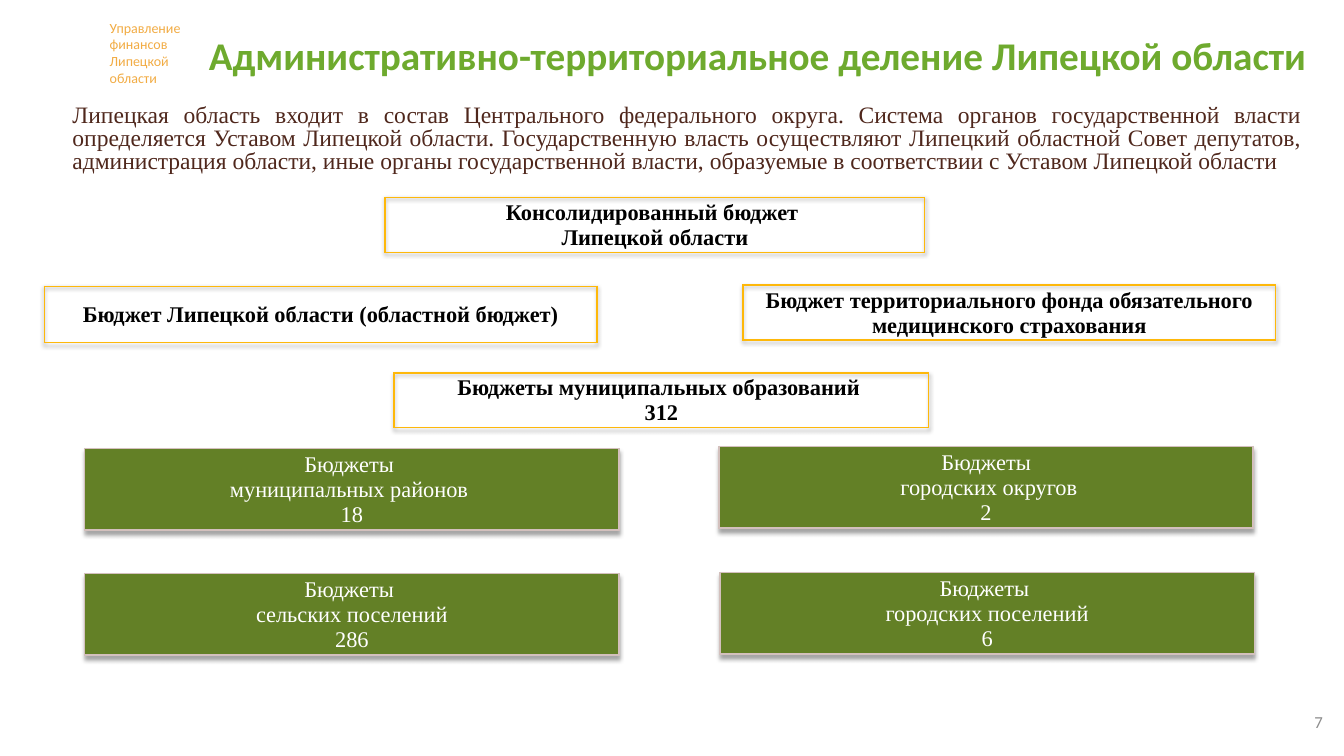
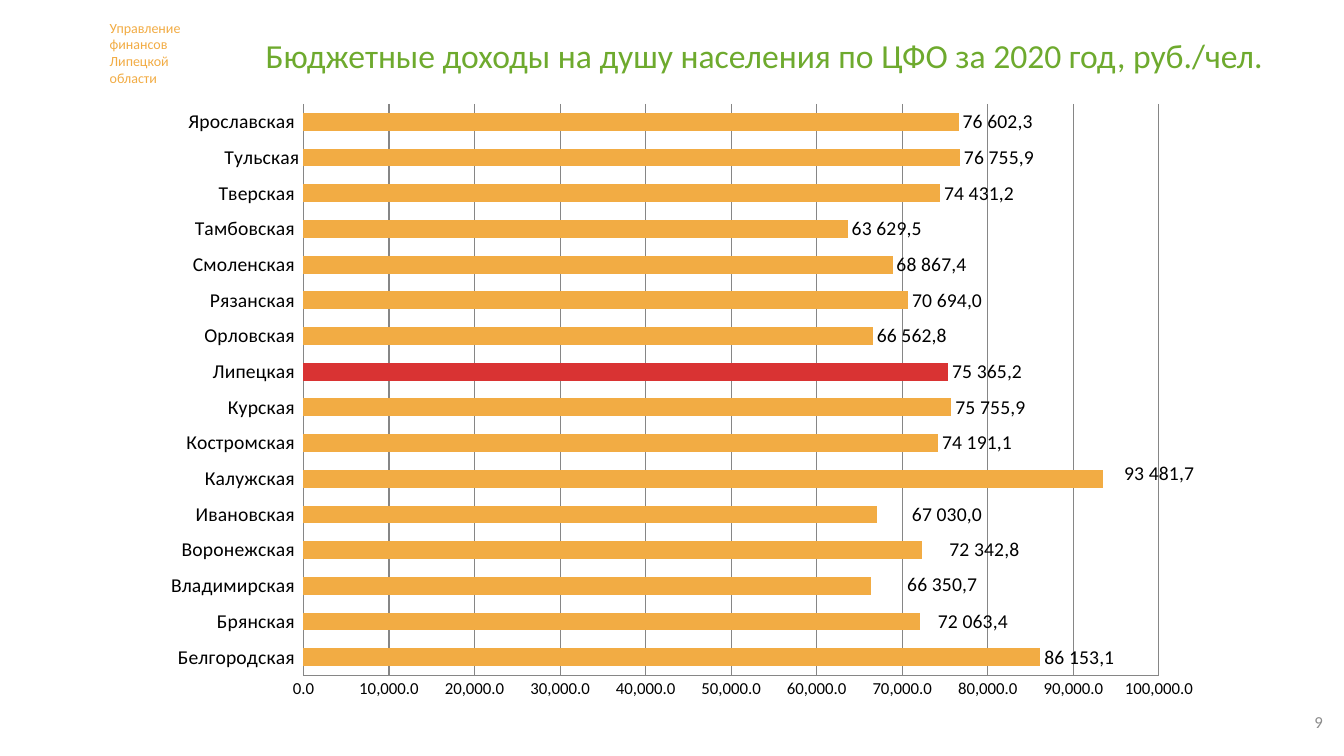
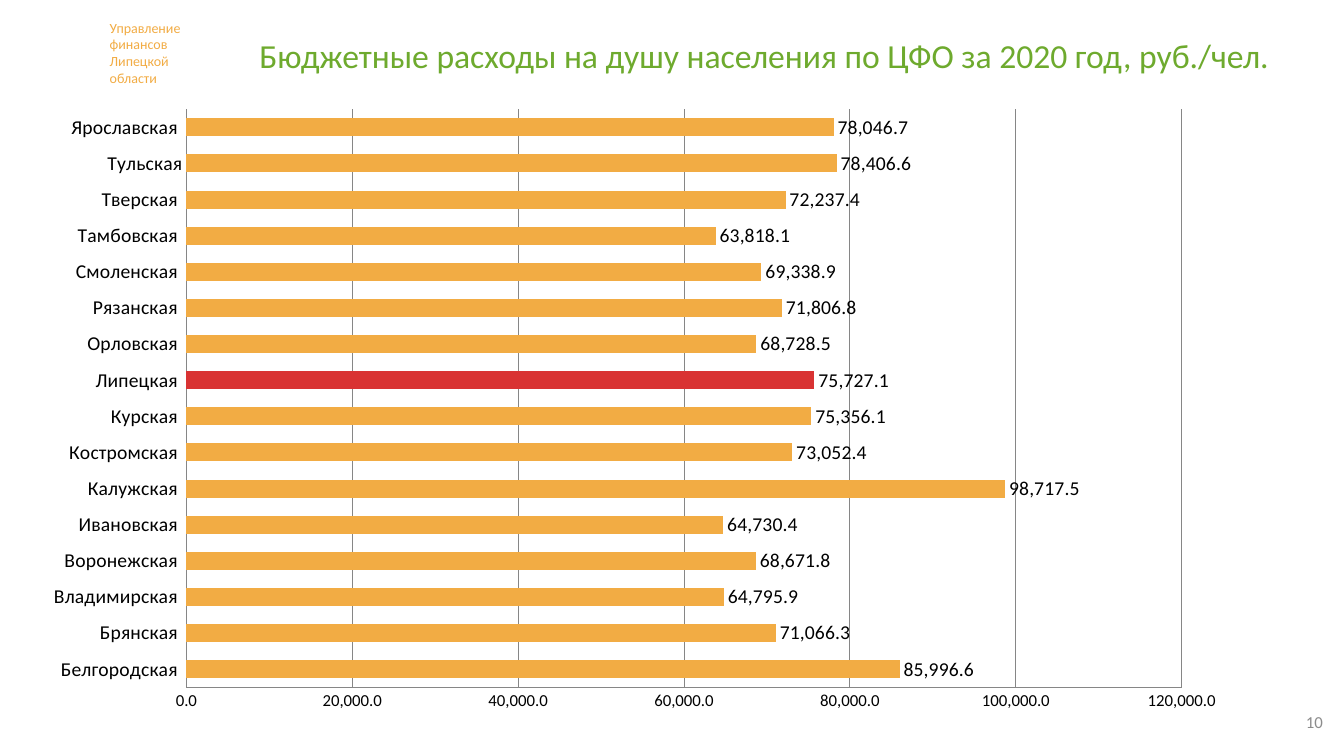
import dataclasses
import typing

import lxml.etree
import pptx
import pptx.chart.data
import pptx.dml.color
import pptx.enum.chart
import pptx.enum.text
import pptx.oxml
import pptx.oxml.ns
import pptx.util

PX = 9144  # EMU in one px, 100 px to the inch
ALIGN = pptx.enum.text.PP_ALIGN
MIDDLE = pptx.enum.text.MSO_ANCHOR.MIDDLE
qn = pptx.oxml.ns.qn


def px(length: int) -> int:
    return length * PX


# Theme: colours and type sizes
@dataclasses.dataclass(frozen=True)
class Theme:
    sans: str = "Calibri"
    serif: str = "Times New Roman"
    green: str = "6EAA2E"
    orange: str = "F2AC44"
    red: str = "D93333"
    brown: str = "4F271C"
    black: str = "000000"
    white: str = "FFFFFF"
    gray: str = "8C8C8C"
    grid: str = "868686"
    gold: str = "FEB80A"
    olive: str = "638026"
    beige: str = "D3C0BD"
    headline: float = 28
    title: float = 24
    chart: float = 18
    intro: float = 16.8
    box: float = 16
    label: float = 14
    small: float = 12
    office: float = 10


THEME = Theme()


class Area(typing.NamedTuple):
    left: int
    top: int
    width: int
    height: int

    def emu(self) -> list[int]:
        return [px(length) for length in self]


@dataclasses.dataclass(frozen=True)
class BoxStyle:
    border: str
    text: str
    bold: bool
    shadow_distance: int
    fill: str | None = None


@dataclasses.dataclass(frozen=True)
class BudgetBox:
    area: Area
    text: str
    style: BoxStyle
    row_height: int = 40  # the row grows to fit its text


@dataclasses.dataclass(frozen=True)
class RegionChart:
    title: str
    number: int
    area: Area
    plot: tuple[float, float, float, float]
    values: list[float]
    maximum: int
    unit: int
    russian_labels: bool = False
    label_shifts: dict[int, tuple[int, int]] = dataclasses.field(default_factory=dict)


OUTLINED = BoxStyle(THEME.gold, THEME.black, True, 2)
FILLED = BoxStyle(THEME.beige, THEME.white, False, 4, THEME.olive)

# Content
OFFICE = "Управление финансов Липецкой области"
INTRO = (
    "Липецкая область входит в состав Центрального федерального округа. "
    "Система органов государственной власти определяется Уставом Липецкой области. "
    "Государственную власть осуществляют Липецкий областной Совет депутатов, "
    "администрация области, иные органы государственной власти, образуемые "
    "в соответствии с Уставом Липецкой области"
)
BUDGETS = [
    BudgetBox(Area(382, 196, 535, 54), "Консолидированный бюджет \nЛипецкой области", OUTLINED),
    BudgetBox(Area(44, 284, 548, 56), "Бюджет Липецкой области (областной бюджет)", OUTLINED, 56),
    BudgetBox(Area(737, 283, 528, 54),
              "Бюджет территориального фонда обязательного медицинского страхования",
              OUTLINED, 50),
    BudgetBox(Area(391, 370, 530, 54), "Бюджеты муниципальных образований \n312", OUTLINED),
    BudgetBox(Area(84, 445, 530, 81), "Бюджеты \nмуниципальных районов \n18", FILLED),
    BudgetBox(Area(713, 443, 530, 81), "Бюджеты\n городских округов\n2", FILLED),
    BudgetBox(Area(84, 569, 530, 81), "Бюджеты \nсельских поселений\n286", FILLED),
    BudgetBox(Area(714, 568, 530, 81), "Бюджеты \nгородских поселений\n6", FILLED),
]
REGIONS = [
    "Белгородская ", "Брянская ", "Владимирская ", "Воронежская ", "Ивановская ", "Калужская ",
    "Костромская ", "Курская ", "Липецкая ", "Орловская ", "Рязанская ", "Смоленская ",
    "Тамбовская ", "Тверская ", "Тульская", "Ярославская ",
]
HIGHLIGHT = REGIONS.index("Липецкая ")
CHARTS = [
    RegionChart(
        "Бюджетные доходы на душу населения по ЦФО за 2020 год, руб./чел.", 9,
        Area(34, 92, 1219, 622), (0.219, 0.018, 0.696, 0.911),
        [86153.1, 72063.4, 66350.7, 72342.8, 67030.0, 93481.7, 74191.1, 75755.9,
         75365.2, 66562.8, 70694.0, 68867.4, 63629.5, 74431.2, 76755.9, 76602.3],
        100000, 10000, True,
        {1: (14, 0), 2: (32, -1), 3: (23, 0), 4: (31, 0), 5: (17, -5)},
    ),
    RegionChart(
        "Бюджетные расходы на душу населения по ЦФО за 2020 год, руб./чел.", 10,
        Area(30, 96, 1201, 622), (0.129, 0.02, 0.822, 0.922),
        [85996.6, 71066.3, 64795.9, 68671.8, 64730.4, 98717.5, 73052.4, 75356.1,
         75727.1, 68728.5, 71806.8, 69338.9, 63818.1, 72237.4, 78406.6, 78046.7],
        120000, 20000,
    ),
]


# Formatting helpers
def rgb(color: str) -> pptx.dml.color.RGBColor:
    return pptx.dml.color.RGBColor.from_string(color)


def set_values(target: typing.Any, **values: typing.Any) -> None:
    for name, value in values.items():
        setattr(target, name, value)


def set_font(font: typing.Any, size: float, color: str, name: str = THEME.sans,
             bold: bool = False) -> None:
    set_values(font, size=pptx.util.Pt(size), name=name, bold=bold)
    font.color.rgb = rgb(color)


def write(frame: typing.Any, text: str, alignment: typing.Any, size: float, color: str,
          name: str = THEME.sans, bold: bool = False, spacing: float | None = None) -> None:
    frame.text = text
    for paragraph in frame.paragraphs:
        set_values(paragraph, alignment=alignment, line_spacing=spacing)
        for run in paragraph.runs:
            set_font(run.font, size, color, name, bold)


def add_text(slide: typing.Any, area: Area, anchor: typing.Any, text: str,
             *style: typing.Any, **options: typing.Any) -> None:
    shape = slide.shapes.add_textbox(*area.emu())
    set_values(shape.text_frame, word_wrap=True, vertical_anchor=anchor)
    write(shape.text_frame, text, *style, **options)


# Shared parts of every slide: office name, title, number
def add_slide(presentation: typing.Any, title: str, area: Area, size: float,
              bold: bool, number: int) -> typing.Any:
    slide = presentation.slides.add_slide(presentation.slide_layouts[5])
    left, top, width, height = area.emu()
    shape = slide.shapes.title
    set_values(shape, left=left, top=top, width=width, height=height)
    set_values(shape.text_frame, word_wrap=True, vertical_anchor=MIDDLE,
               auto_size=pptx.enum.text.MSO_AUTO_SIZE.NONE)
    write(shape.text_frame, title, ALIGN.CENTER, size, THEME.green, bold=bold, spacing=0.9)
    add_text(slide, Area(99, 14, 97, 77), pptx.enum.text.MSO_ANCHOR.TOP, OFFICE,
             ALIGN.LEFT, THEME.office, THEME.orange)
    add_text(slide, Area(1011, 696, 311, 40), MIDDLE, str(number),
             ALIGN.RIGHT, THEME.small, THEME.gray)
    return slide


# Budget boxes: one-cell tables with a border and a soft shadow
def add_budget_box(slide: typing.Any, box: BudgetBox) -> None:
    frame = slide.shapes.add_table(1, 1, *box.area.emu())
    table = frame.table
    table.rows[0].height = px(box.row_height)
    frame.height = px(box.area.height)
    properties = table._tbl.tblPr
    properties.find(qn("a:tableStyleId")).text = "{2D5ABB26-0587-4C30-8999-92F81FD0307C}"
    set_values(table, first_row=False, horz_banding=False)
    namespace = pptx.oxml.ns.nsdecls("a")
    properties.insert(0, pptx.oxml.parse_xml(
        f'<a:effectLst {namespace}><a:outerShdw blurRad="{px(4)}" '
        f'dist="{px(box.style.shadow_distance)}" dir="5400000">'
        '<a:srgbClr val="000000"><a:alpha val="35000"/></a:srgbClr>'
        '</a:outerShdw></a:effectLst>'))

    cell = table.cell(0, 0)
    set_values(cell, vertical_anchor=MIDDLE, margin_left=px(1), margin_right=px(1),
               margin_top=px(1), margin_bottom=0)
    write(cell.text_frame, box.text, ALIGN.CENTER, THEME.box, box.style.text,
          THEME.serif, box.style.bold)
    if box.style.fill:
        cell.fill.solid()
        cell.fill.fore_color.rgb = rgb(box.style.fill)
    else:
        cell.fill.background()
    for position, side in enumerate(("lnL", "lnR", "lnT", "lnB")):
        cell._tc.get_or_add_tcPr().insert(position, pptx.oxml.parse_xml(
            f'<a:{side} {namespace} w="{pptx.util.Pt(1.25)}"><a:solidFill>'
            f'<a:srgbClr val="{box.style.border}"/></a:solidFill></a:{side}>'))


# Charts
def set_layout(parent: typing.Any, position: int, **values: typing.Any) -> None:
    """Give a chart part a manual layout at the given child position."""
    for old in parent.findall(qn("c:layout")):
        parent.remove(old)
    layout = lxml.etree.Element(qn("c:layout"))
    manual = lxml.etree.SubElement(layout, qn("c:manualLayout"))
    for name, value in values.items():
        lxml.etree.SubElement(manual, qn(f"c:{name}")).set("val", str(value))
    parent.insert(position, layout)


def format_axes(chart: typing.Any, data: RegionChart) -> None:
    none = pptx.enum.chart.XL_TICK_MARK.NONE
    for axis, size in ((chart.category_axis, THEME.label), (chart.value_axis, THEME.small)):
        set_values(axis, major_tick_mark=none, minor_tick_mark=none)
        set_font(axis.tick_labels.font, size, THEME.black)
        axis.format.line.color.rgb = rgb(THEME.grid)
    chart.category_axis.has_major_gridlines = False
    value_axis = chart.value_axis
    set_values(value_axis, minimum_scale=0, maximum_scale=data.maximum,
               major_unit=data.unit, has_major_gridlines=True)
    value_axis.major_gridlines.format.line.color.rgb = rgb(THEME.grid)
    set_values(value_axis.tick_labels, number_format="#,##0.0", number_format_is_linked=False)


def write_russian_labels(series: typing.Any, data: RegionChart) -> None:
    for index, value in enumerate(data.values):
        label = series.points[index].data_label
        text = f"{value:,.1f}".replace(",", " ").replace(".", ",")
        write(label.text_frame, text, ALIGN.CENTER, THEME.label, THEME.black)
        label.position = pptx.enum.chart.XL_LABEL_POSITION.OUTSIDE_END


def add_region_chart(slide: typing.Any, data: RegionChart) -> None:
    chart_data = pptx.chart.data.CategoryChartData()
    chart_data.categories = REGIONS
    chart_data.add_series("Series 1", data.values)
    chart = slide.shapes.add_chart(pptx.enum.chart.XL_CHART_TYPE.BAR_CLUSTERED,
                                   *data.area.emu(), chart_data).chart
    set_values(chart, has_legend=False, has_title=False)
    set_font(chart.font, THEME.chart, THEME.black)
    format_axes(chart, data)

    plot = chart.plots[0]
    set_values(plot, gap_width=100, vary_by_categories=False)
    series = plot.series[0]
    for part, color in ((series, THEME.orange), (series.points[HIGHLIGHT], THEME.red)):
        part.format.fill.solid()
        part.format.fill.fore_color.rgb = rgb(color)

    labels = series.data_labels
    set_values(labels, show_value=True, number_format="#,##0.0", number_format_is_linked=False,
               position=pptx.enum.chart.XL_LABEL_POSITION.OUTSIDE_END)
    set_font(labels.font, THEME.label, THEME.black)
    if data.russian_labels:
        write_russian_labels(series, data)
    for leader_lines in chart.element.iter(qn("c:showLeaderLines")):
        leader_lines.set("val", "0")
    for label in chart.element.iter(qn("c:dLbl")):
        index = int(label.find(qn("c:idx")).get("val"))
        if index in data.label_shifts:
            across, down = data.label_shifts[index]
            set_layout(label, 1, x=across / data.area.width, y=down / data.area.height)

    left, top, width, height = data.plot
    set_layout(next(chart.element.iter(qn("c:plotArea"))), 0, layoutTarget="inner",
               xMode="edge", yMode="edge", x=left, y=top, w=width, h=height)


# Slides
def main() -> None:
    presentation = pptx.Presentation()
    set_values(presentation, slide_width=px(1333), slide_height=px(750))

    structure = add_slide(presentation, "Административно-территориальное деление Липецкой области",
                          Area(191, 25, 1120, 64), THEME.headline, True, 7)
    add_text(structure, Area(62, 94, 1238, 89), MIDDLE, INTRO, ALIGN.JUSTIFY,
             THEME.intro, THEME.brown, THEME.serif, spacing=0.8)
    for box in BUDGETS:
        add_budget_box(structure, box)

    for data in CHARTS:
        slide = add_slide(presentation, data.title, Area(210, 25, 1096, 64),
                          THEME.title, False, data.number)
        add_region_chart(slide, data)

    presentation.save("out.pptx")


if __name__ == "__main__":
    main()
